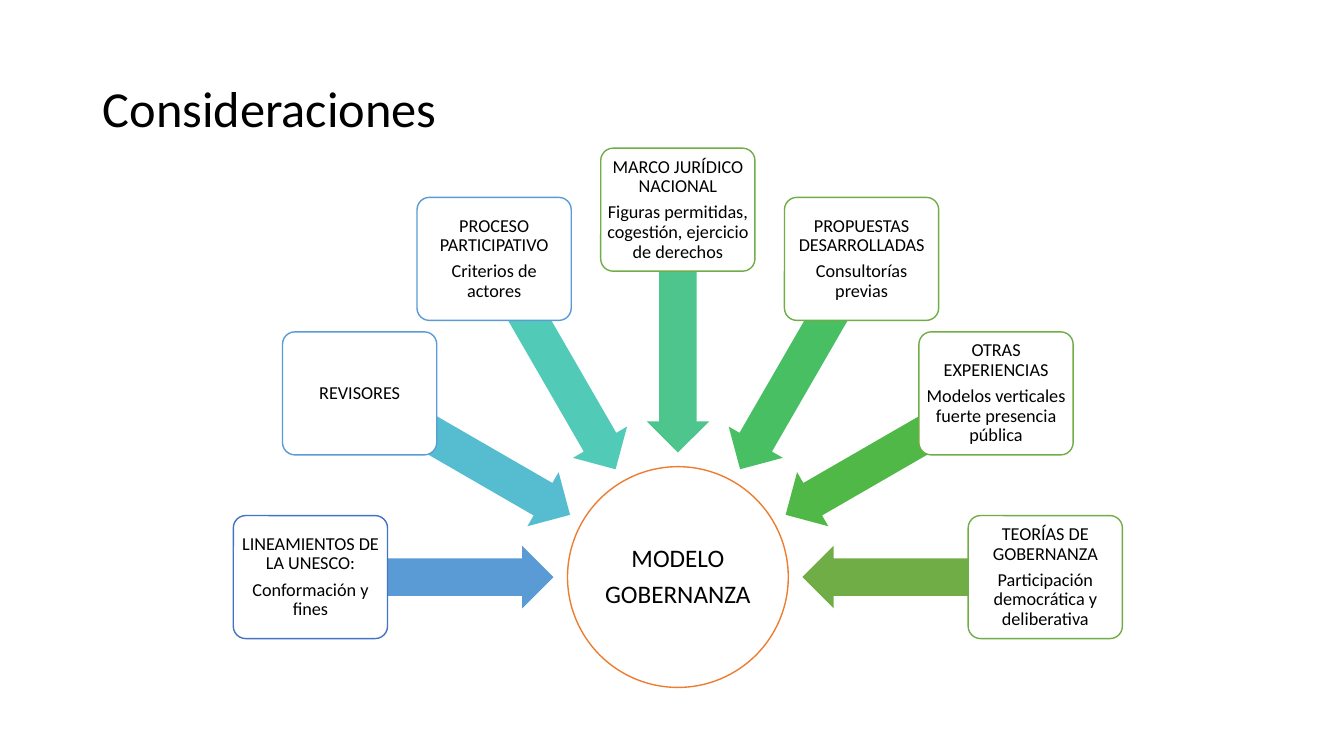
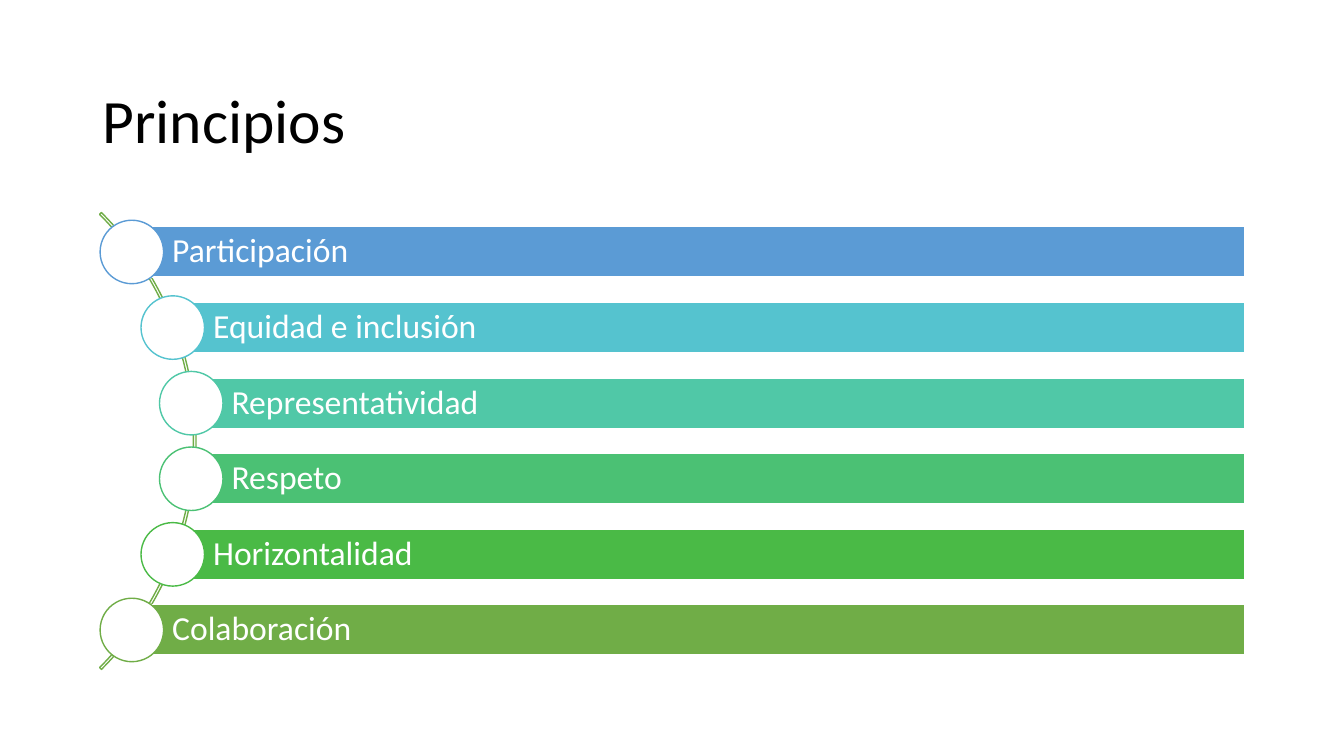
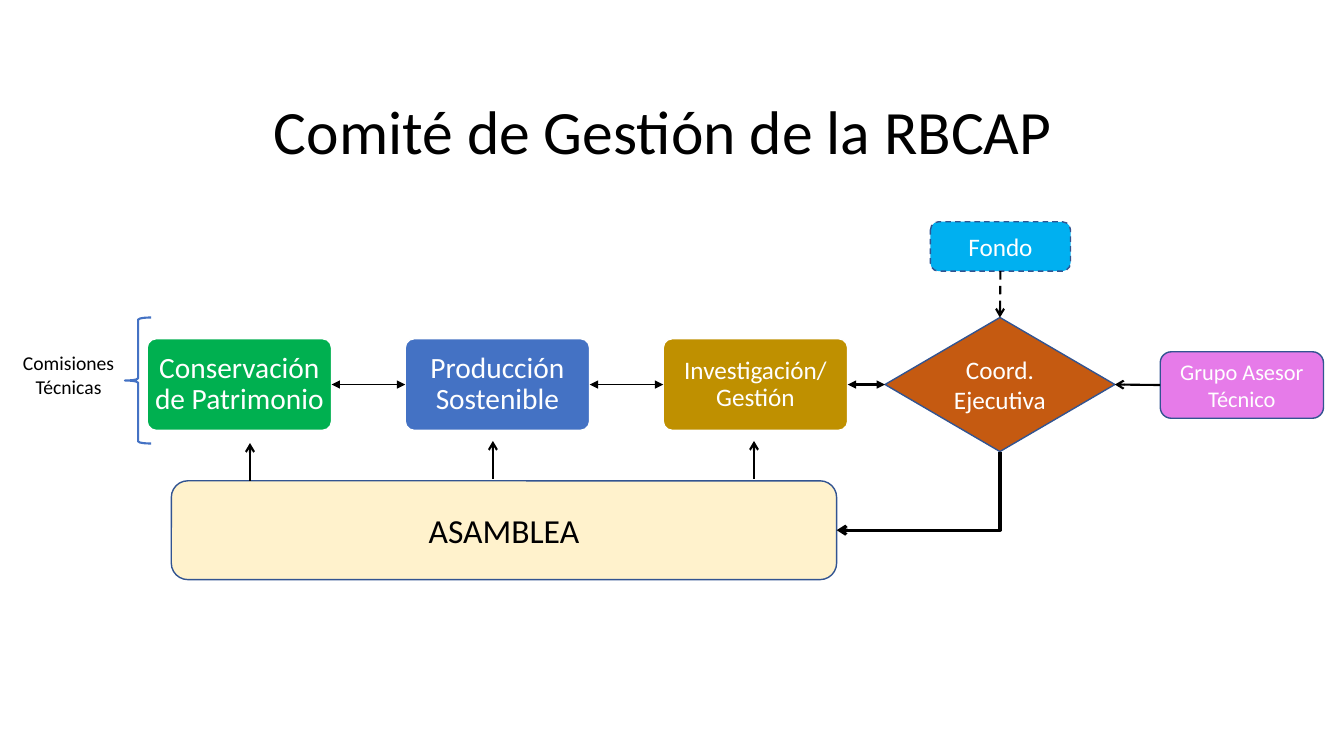
from math import cos, radians, sin, sqrt

from lxml.etree import SubElement
from pptx import Presentation
from pptx.dml.color import RGBColor
from pptx.enum.dml import MSO_LINE
from pptx.enum.shapes import MSO_CONNECTOR, MSO_SHAPE
from pptx.enum.text import MSO_ANCHOR, PP_ALIGN
from pptx.oxml.ns import qn
from pptx.util import Emu, Inches, Pt

CELL = Inches(0.1)
COLUMNS, ROWS = 133.33, 75
FONT = "Calibri"
TOP, LEFT, BOTTOM, RIGHT = range(4)

BLACK = RGBColor(0x00, 0x00, 0x00)
WHITE = RGBColor(0xFF, 0xFF, 0xFF)
ORANGE = RGBColor(0xED, 0x7D, 0x31)
RUST = RGBColor(0xC5, 0x5A, 0x11)
GOLD = RGBColor(0xBF, 0x90, 0x00)
CREAM = RGBColor(0xFF, 0xF2, 0xCC)
PINK = RGBColor(0xE6, 0x7B, 0xE9)
NAVY = RGBColor(0x32, 0x54, 0x91)
BLUE = RGBColor(0x44, 0x72, 0xC4)
LIGHT_BLUE = RGBColor(0x5B, 0x9B, 0xD5)
SKY = RGBColor(0x00, 0xB0, 0xF0)
EMERALD = RGBColor(0x00, 0xB0, 0x50)
GREEN = RGBColor(0x70, 0xAD, 0x47)

ARROW_COLOURS = [
    LIGHT_BLUE, RGBColor(0x56, 0xBC, 0xD0), RGBColor(0x52, 0xCA, 0xB8),
    RGBColor(0x4D, 0xC5, 0x8D), RGBColor(0x49, 0xBF, 0x64),
    RGBColor(0x50, 0xB8, 0x46), GREEN,
]
BAR_COLOURS = [
    LIGHT_BLUE, RGBColor(0x55, 0xC3, 0xCF), RGBColor(0x50, 0xC8, 0xA7),
    RGBColor(0x4B, 0xC1, 0x74), RGBColor(0x4A, 0xBA, 0x46), GREEN,
]

CONSIDERATIONS = [
    (BLUE, ["LINEAMIENTOS DE LA UNESCO:", "Conformación y fines"]),
    (LIGHT_BLUE, ["REVISORES"]),
    (LIGHT_BLUE, ["PROCESO PARTICIPATIVO", "Criterios de actores"]),
    (GREEN, ["MARCO JURÍDICO NACIONAL",
             "Figuras permitidas, cogestión, ejercicio de derechos"]),
    (GREEN, ["PROPUESTAS DESARROLLADAS", "Consultorías previas"]),
    (GREEN, ["OTRAS EXPERIENCIAS", "Modelos verticales fuerte presencia pública"]),
    (GREEN, ["TEORÍAS DE GOBERNANZA", "Participación democrática y deliberativa"]),
]
PRINCIPLES = ["Participación", "Equidad e inclusión", "Representatividad",
              "Respeto", "Horizontalidad", "Colaboración"]
COMMISSIONS = [
    ("Conservación de Patrimonio", EMERALD, 21),
    ("Producción Sostenible", BLUE, 21),
    ("Investigación/Gestión", GOLD, 18),
]


def grid(*cells):
    """Turn counts of grid cells into lengths."""
    return [Emu(round(count * CELL)) for count in cells]


def centred(x, y, width, height):
    """Give the frame of an element from its centre."""
    return x - width / 2, y - height / 2, width, height


def write(box, lines, size, colour=BLACK, align=PP_ALIGN.CENTER,
          insets=(1, 0.5, 1, 0.5), leading=0.9, gap=0.35):
    """Fill a box with paragraphs; gap is a share of the text size."""
    frame = box.text_frame
    frame.word_wrap = True
    frame.vertical_anchor = MSO_ANCHOR.MIDDLE
    (frame.margin_left, frame.margin_top,
     frame.margin_right, frame.margin_bottom) = grid(*insets)
    frame.text = "\n".join(lines)
    for para in frame.paragraphs:
        para.alignment = align
        para.line_spacing = leading
        para.space_after = Pt(gap * size)
        for span in para.runs:
            span.font.name = FONT
            span.font.size = Pt(size)
            span.font.color.rgb = colour


def add_title(page, text, place, size, align=PP_ALIGN.LEFT):
    """Add the slide title."""
    box = page.shapes.add_textbox(*grid(*place))
    write(box, [text], size, align=align, gap=0)


def add_figure(page, kind, place, fill=None, line=None, width=1, adjust=()):
    """Add a flat preset shape with optional fill and outline."""
    figure = page.shapes.add_shape(kind, *grid(*place))
    figure.shadow.inherit = False
    if fill is None:
        figure.fill.background()
    else:
        figure.fill.solid()
        figure.fill.fore_color.rgb = fill
    if line is None:
        figure.line.fill.background()
    else:
        figure.line.color.rgb = line
        figure.line.width = Pt(width)
    for index, value in enumerate(adjust):
        figure.adjustments[index] = value
    return figure


def add_arrow(page, start, end, width=1.5, head=None, tail="arrow",
              dash=None, route=MSO_CONNECTOR.STRAIGHT):
    """Add a black connector with arrowheads between two grid points."""
    arrow = page.shapes.add_connector(route, *grid(*start, *end))
    arrow.line.color.rgb = BLACK
    arrow.line.width = Pt(width)
    if dash is not None:
        arrow.line.dash_style = dash
    properties = arrow._element.spPr
    outline = properties.find(qn("a:ln"))
    for tag, kind in (("a:headEnd", head), ("a:tailEnd", tail)):
        if kind:
            SubElement(outline, qn(tag), type=kind)
    SubElement(properties, qn("a:effectLst"))
    return arrow


def join(page, source, source_side, target, target_side, **style):
    """Join the sides of two shapes with an arrow."""
    arrow = add_arrow(page, (0, 0), (0, 0), **style)
    arrow.begin_connect(source, source_side)
    arrow.end_connect(target, target_side)


def add_corner_arrow(page, start, end, width):
    """Add an arrow that goes down from start, then left to end."""
    run, drop = start[0] - end[0], end[1] - start[1]
    left, top, across, down = centred(
        (start[0] + end[0]) / 2, (start[1] + end[1]) / 2, drop, run)
    arrow = add_arrow(page, (left, top), (left + across, top + down), width,
                      route=MSO_CONNECTOR.ELBOW)
    properties = arrow._element.spPr
    properties.find(qn("a:prstGeom")).set("prst", "bentConnector2")
    properties.find(qn("a:xfrm")).set("rot", str(90 * 60000))


def build_considerations(page):
    """Draw seven inputs around the governance model."""
    add_title(page, "Consideraciones", (9.2, 7.4, 115, 7.3), 36)
    hub_x, hub_y = 67.25, 57.25
    hub = add_figure(page, MSO_SHAPE.OVAL, centred(hub_x, hub_y, 21.9, 21.9),
                     WHITE, ORANGE)
    write(hub, ["MODELO", "GOBERNANZA"], 18, insets=[0.1] * 4)

    step = 180 / (len(CONSIDERATIONS) - 1)
    for index, (outline, lines) in enumerate(CONSIDERATIONS):
        turn = 180 + index * step
        dx, dy = cos(radians(turn)), sin(radians(turn))
        arrow = add_figure(
            page, MSO_SHAPE.LEFT_ARROW,
            centred(hub_x + 24.4 * dx, hub_y + 24.4 * dy, 24.1, 6.2),
            ARROW_COLOURS[index], adjust=(0.6, 0.5))
        arrow.rotation = turn % 360
        card = add_figure(
            page, MSO_SHAPE.ROUNDED_RECTANGLE,
            centred(hub_x + 36.45 * dx, hub_y + 36.45 * dy, 15.3, 12.2),
            WHITE, outline, adjust=[0.1])
        write(card, lines, 13, insets=[0.3] * 4)


def build_principles(page):
    """Draw the principles as bars along an arc."""
    add_title(page, "Principios", (9.2, 6.1, 115, 12.4), 44)
    centre_x, first_row, pitch, right_edge = -12.6, 25, 7.5, 123.5
    centre_y = first_row + pitch * (len(PRINCIPLES) - 1) / 2
    add_figure(page, MSO_SHAPE.BLOCK_ARC, centred(centre_x, centre_y, 64.1, 64.1),
               line=GREEN, adjust=(189, 27, 0.004))

    for index, (name, colour) in enumerate(zip(PRINCIPLES, BAR_COLOURS)):
        y = first_row + index * pitch
        x = centre_x + sqrt(31.8 ** 2 - (y - centre_y) ** 2)
        bar = add_figure(page, MSO_SHAPE.RECTANGLE,
                         (x, y - 2.5, right_edge - x, 5), colour, WHITE)
        write(bar, [name], 24, WHITE, PP_ALIGN.LEFT, (4, 0.7, 0.7, 0.7))
        add_figure(page, MSO_SHAPE.OVAL, centred(x, y, 6.3, 6.3), WHITE, colour)


def build_committee(page):
    """Draw the organisation of the management committee."""
    add_title(page, "Comité de Gestión de la RBCAP", (8.3, 8.1, 115, 10.5), 44,
              PP_ALIGN.CENTER)

    card_width, card_gap = 18.3, 7.3
    chain = []
    for index, (name, colour, size) in enumerate(COMMISSIONS):
        left = 14.6 + index * (card_width + card_gap)
        card = add_figure(page, MSO_SHAPE.ROUNDED_RECTANGLE,
                          (left, 33.6, card_width, 9.1), colour, WHITE, adjust=[0.1])
        write(card, [name], size, WHITE, insets=[0.1] * 4)
        chain.append(card)

    bodies = []
    for name, kind, place, fill, colour, size in (
        ("Coord. Ejecutiva", MSO_SHAPE.FLOWCHART_DECISION,
         (87.8, 31.5, 22.8, 13.3), RUST, WHITE, 18),
        ("Fondo", MSO_SHAPE.ROUNDED_RECTANGLE,
         (92.3, 22, 13.9, 4.9), SKY, WHITE, 18),
        ("Grupo Asesor Técnico", MSO_SHAPE.ROUNDED_RECTANGLE,
         (115.1, 34.9, 16.2, 6.6), PINK, WHITE, 16),
        ("ASAMBLEA", MSO_SHAPE.ROUNDED_RECTANGLE,
         (17, 47.7, 66, 9.8), CREAM, BLACK, 24),
    ):
        body = add_figure(page, kind, place, fill, NAVY)
        write(body, [name], size, colour, leading=1, gap=0)
        bodies.append(body)
    coordination, fund, advisers, _ = bodies
    fund.line.dash_style = MSO_LINE.DASH

    add_figure(page, MSO_SHAPE.LEFT_BRACE, (12.4, 31.5, 2.6, 12.5),
               line=BLUE, width=1.5)
    label = page.shapes.add_textbox(*grid(1.2, 34.3, 11.2, 5.7))
    write(label, ["Comisiones Técnicas"], 14, leading=1, gap=0)

    chain.append(coordination)
    for source, target, width in zip(chain, chain[1:], (1, 1, 1.5)):
        join(page, source, RIGHT, target, LEFT, width=width,
             head="triangle", tail="triangle")
    join(page, fund, BOTTOM, coordination, TOP, dash=MSO_LINE.DASH)
    join(page, advisers, LEFT, coordination, RIGHT)
    for x, y in ((24.8, 47.7), (48.9, 47.5), (74.8, 47.5)):
        add_arrow(page, (x, y), (x, y - 3.75))
    add_corner_arrow(page, (99.2, 44.8), (83, 52.6), 2.25)


def main():
    """Build and save the deck."""
    deck = Presentation()
    deck.slide_width, deck.slide_height = grid(COLUMNS, ROWS)
    for build in (build_considerations, build_principles, build_committee):
        build(deck.slides.add_slide(deck.slide_layouts[6]))
    deck.save("out.pptx")


if __name__ == "__main__":
    main()
